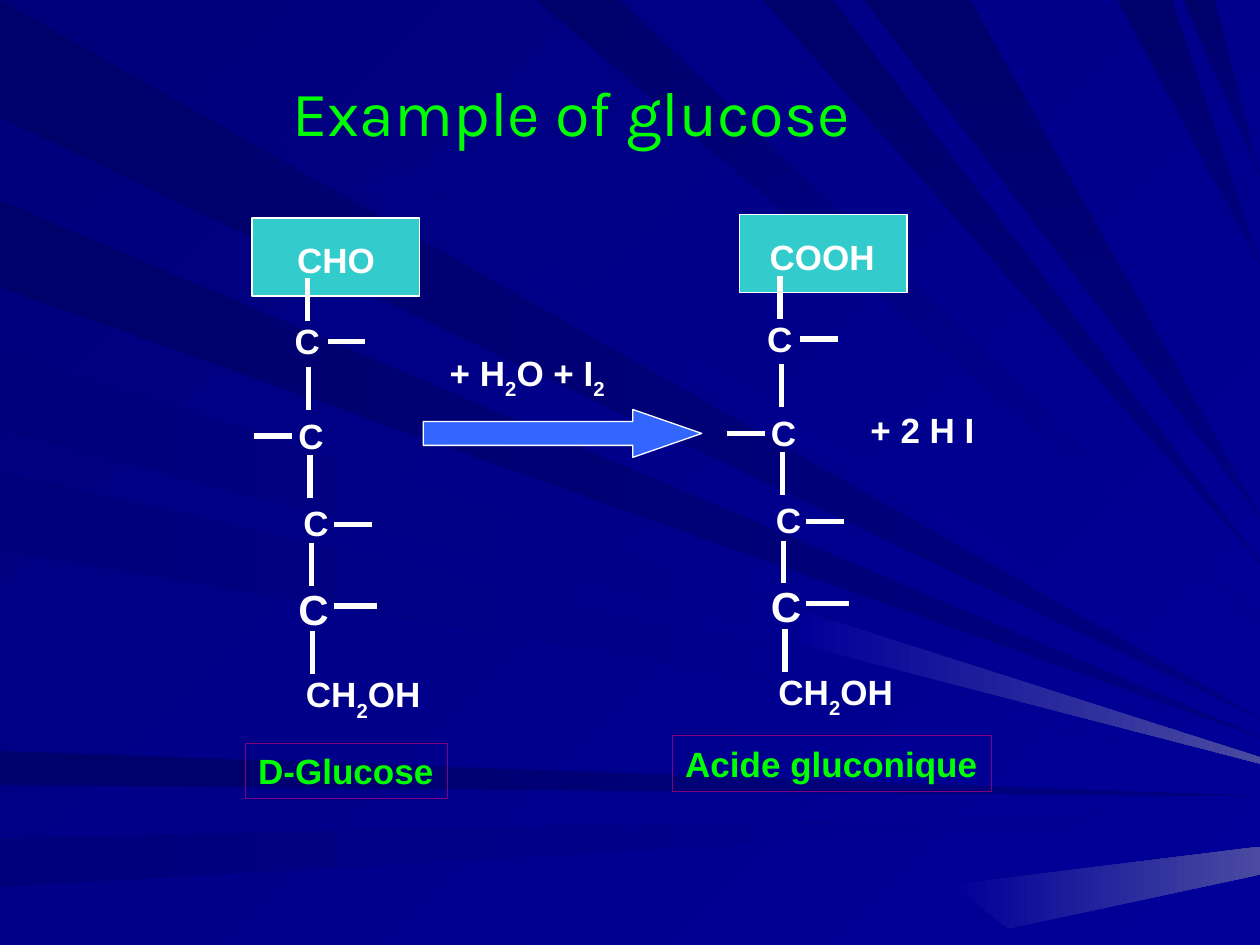
from lxml import etree
from pptx import Presentation
from pptx.dml.color import RGBColor
from pptx.enum.shapes import MSO_CONNECTOR, MSO_SHAPE
from pptx.enum.text import MSO_ANCHOR, PP_ALIGN
from pptx.oxml.ns import qn
from pptx.util import Inches, Pt

STRAIGHT = MSO_CONNECTOR.STRAIGHT
RECT, ARROW = MSO_SHAPE.RECTANGLE, MSO_SHAPE.RIGHT_ARROW
MIDDLE, TOP = MSO_ANCHOR.MIDDLE, MSO_ANCHOR.TOP
LEFT, CENTER = PP_ALIGN.LEFT, PP_ALIGN.CENTER
WHITE = RGBColor(0xFF, 0xFF, 0xFF)
GREEN = RGBColor(0x00, 0xFF, 0x00)
TEAL = RGBColor(0x33, 0xCC, 0xCC)
BLUE = RGBColor(0x33, 0x66, 0xFF)
PURPLE = RGBColor(0x80, 0x00, 0x80)
MIDNIGHT = RGBColor(0x00, 0x00, 0x6B)
DEEP = RGBColor(0x00, 0x00, 0x7B)
NAVY = RGBColor(0x00, 0x00, 0x80)
ROYAL = RGBColor(0x00, 0x00, 0x99)
GLOW = RGBColor(0x4A, 0x4A, 0xA1)


def paint(fill, start, end, angle):
    fill.gradient()
    fill.gradient_angle = -angle % 360
    for stop, color in zip(fill.gradient_stops, (start, end)):
        stop.color.rgb = color


def write(sp, text, size=20, color=WHITE, name="Arial", bold=True, align=LEFT, anchor=TOP):
    tf = sp.text_frame
    tf.word_wrap = True
    tf.vertical_anchor = anchor
    tf.margin_right = 0
    p = tf.paragraphs[0]
    p.alignment = align
    subscript = False
    for part in text.replace("_2", "|2|").split("|"):
        if part:
            r = p.add_run()
            r.text = part
            for key, value in {"size": Pt(size), "name": name, "bold": bold}.items():
                setattr(r.font, key, value)
            r.font.color.rgb = color
            if subscript:
                r.font._element.set("baseline", "-30000")
        subscript = not subscript


prs = Presentation()
prs.slide_width, prs.slide_height = Inches(10), Inches(7.5)
s = prs.slides.add_slide(prs.slide_layouts[6])
paint(s.background.fill, DEEP, ROYAL, 45)

left_rays = [(0, 0.93, 5.7, MIDNIGHT, NAVY), (1.59, 2.28, 5.85, MIDNIGHT, NAVY),
             (2.78, 3.42, 6, DEEP, ROYAL), (3.74, 4.37, 6.05, DEEP, ROYAL),
             (5.96, 6.23, 6.32, MIDNIGHT, NAVY), (6.65, 7.04, 6.45, DEEP, ROYAL)]
top_rays = [(0.26, 1, 5.63, DEEP, ROYAL), (4.26, 4.92, 4.93, MIDNIGHT, ROYAL),
            (6.06, 6.61, 4.46, MIDNIGHT, NAVY), (6.86, 7.7, 4.1, MIDNIGHT, NAVY),
            (8.87, 9.3, 2.1, MIDNIGHT, NAVY), (9.39, 9.64, 1.4, MIDNIGHT, NAVY)]
rays = [([(0, a), (0, b), (10, tip)], start, end, 0) for a, b, tip, start, end in left_rays]
rays += [([(a, 0), (b, 0), (10, tip)], start, end, 90 if end == NAVY else 45)
         for a, b, tip, start, end in top_rays]
rays += [([(6.37, 4.85), (6.33, 5.11), (10, 6.06), (10, 6.01)], ROYAL, GLOW, 0),
         ([(7.56, 7.02), (8, 7.37), (10, 6.94), (10, 6.72)], ROYAL, GLOW, 0)]
for points, start, end, angle in rays:
    corners = [(Inches(x), Inches(y)) for x, y in points]
    builder = s.shapes.build_freeform(*corners[0])
    builder.add_line_segments(corners[1:], close=True)
    sp = builder.convert_to_shape()
    sp.shadow.inherit = False
    sp.line.fill.background()
    paint(sp.fill, start, end, angle)

boxes = [
    (RECT, 5.87, 1.7, 1.33, 0.62, TEAL, WHITE, ""),
    (RECT, 2, 1.73, 1.33, 0.62, TEAL, WHITE, ""),
    (ARROW, 3.36, 3.25, 2.21, 0.38, BLUE, WHITE, ""),
    (RECT, 1.95, 5.9, 1.6, 0.44, None, PURPLE, "D-Glucose"),
    (RECT, 5.34, 5.84, 2.53, 0.44, None, PURPLE, "Acide gluconique"),
]
for kind, x, y, w, h, fill, line, text in boxes:
    sp = s.shapes.add_shape(kind, Inches(x), Inches(y), Inches(w), Inches(h))
    sp.shadow.inherit = False
    sp.line.color.rgb = line
    sp.line.width = Pt(0.75)
    if fill:
        sp.fill.solid()
        sp.fill.fore_color.rgb = fill
    else:
        sp.fill.background()
    if kind == ARROW:
        sp.adjustments[0], sp.adjustments[1] = 0.5, 1.44
    if text:
        write(sp, text, color=GREEN)

title = s.shapes.add_textbox(Inches(0.55), Inches(0.41), Inches(7.87), Inches(0.95))
write(title, "Example of glucose", 36, GREEN, "Karla", False, CENTER, MIDDLE)

labels = [(3.47, 2.74, "+ H_2O + I_2", 20), (6.81, 3.19, "+ 2 H I", 20)]
atoms = [(2.24, 2.49, "C", 20), (2.27, 3.24, "C", 20), (2.31, 3.93, "C", 20),
         (2.27, 4.58, "C", 24), (2.33, 5.29, "CH_2OH", 20)]
bonds = [(2.44 + 0.01 * i, 2.21 + 0.7 * i, 0, 0.34) for i in range(5)]
bonds += [(2.6, 2.71, 0.3, 0), (2.02, 3.46, 0.3, 0), (2.65, 4.16, 0.3, 0), (2.65, 4.81, 0.34, 0)]
for head, dx, dy in (("CHO", 0, 0), ("COOH", 3.75, -0.02)):
    for x, y, text, size in [(2.26, 1.84, head, 20)] + atoms:
        labels.append((x + dx, y + dy, text, size))
    for x, y, w, h in bonds:
        bond = s.shapes.add_connector(STRAIGHT, Inches(x + dx), Inches(y + dy),
                                      Inches(x + w + dx), Inches(y + h + dy))
        bond.line.color.rgb = WHITE
        bond.line.width = Pt(3)
        etree.SubElement(bond._element.spPr, qn("a:effectLst"))

for x, y, text, size in labels:
    w = 0.44 if text == "C" else 1.45 if "+ H_" in text else 1.1
    sp = s.shapes.add_textbox(Inches(x), Inches(y), Inches(w), Inches(0.43))
    write(sp, text, size)

prs.save("out.pptx")
